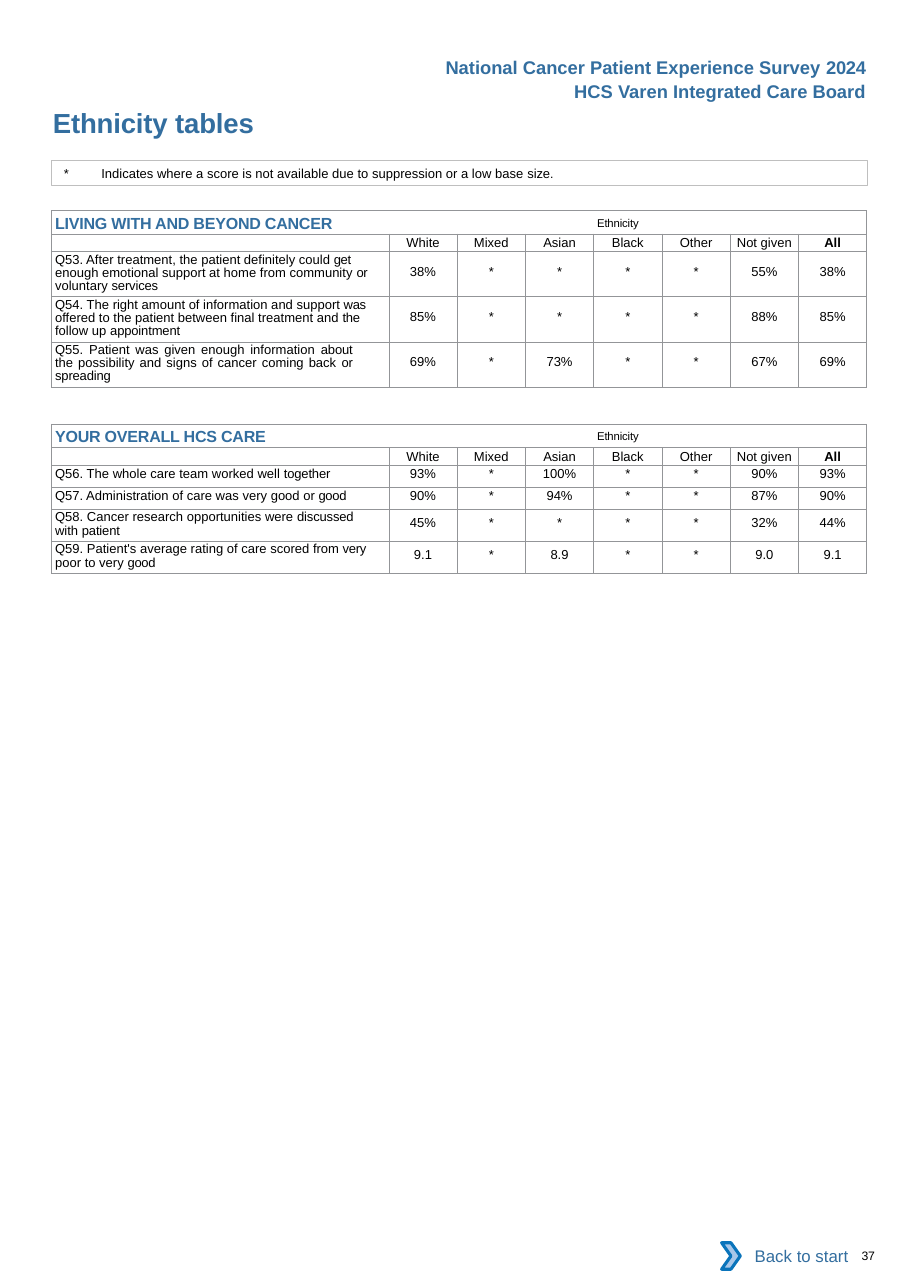
from lxml import etree
from pptx import Presentation
from pptx.dml.color import RGBColor
from pptx.enum.shapes import MSO_SHAPE
from pptx.enum.text import MSO_ANCHOR, PP_ALIGN
from pptx.oxml.ns import qn
from pptx.util import Inches, Pt

RECT, CHEVRON = MSO_SHAPE.RECTANGLE, MSO_SHAPE.CHEVRON
TOP, MIDDLE = MSO_ANCHOR.TOP, MSO_ANCHOR.MIDDLE
LEFT, CENTER, RIGHT, JUSTIFY = PP_ALIGN.LEFT, PP_ALIGN.CENTER, PP_ALIGN.RIGHT, PP_ALIGN.JUSTIFY

BLUE = RGBColor(0x33, 0x6E, 0x9F)
BLACK = RGBColor(0, 0, 0)
WHITE = RGBColor(0xFF, 0xFF, 0xFF)
NOTE_LINE = RGBColor(0xBF, 0xBF, 0xBF)
CHEVRON_FILL = RGBColor(0xA8, 0xC7, 0xE9)
CHEVRON_LINE = RGBColor(0x0A, 0x74, 0xBB)
GRID_HEX = "939598"

FONT = "Arial"
PAGE_W, PAGE_H = 8.26, 11.69
MARGIN = 0.47
BODY_W = 7.4
QUESTION_W = 3.06
GROUPS = ["White", "Mixed", "Asian", "Black", "Other", "Not given", "All"]
VALUE_W = (BODY_W - QUESTION_W) / len(GROUPS)
HEAD_ROWS = [0.21, 0.16]
VALUE_TOP = {1: 0.01, 2: 0.06, 3: 0.12}
ROW_H = {1: 0.2, 2: 0.29, 3: 0.41}

LIVING = [
    (3, LEFT, 0.15, [("Q53. After treatment, the patient definitely could", 0), (" get ", -0.2),
                     ("enough emotional support at home from community ", 0), ("or ", -0.2),
                     ("voluntary ", 0), ("services", -0.1)], "38% * * * * 55% 38%"),
    (3, LEFT, 0.15, [("Q54. The right amount of information and support", 0), (" was ", -0.2),
                     ("offered to the patient between final treatment and ", 0), ("the ", -0.2),
                     ("follow up ", 0), ("appointment", -0.1)], "85% * * * * 88% 85%"),
    (3, JUSTIFY, 0.33, [("Q55. Patient was given enough information ", 0), ("about ", -0.1),
                        ("the possibility and signs of cancer coming back ", 0), ("or ", -0.2),
                        ("spreading", -0.1)], "69% * 73% * * 67% 69%"),
]
OVERALL = [
    (1, LEFT, 0, [("Q56. The whole care team worked well ", 0), ("together", -0.1)],
     "93% * 100% * * 90% 93%"),
    (1, LEFT, 0, [("Q57. Administration of care was very good or", 0), (" good", -0.2)],
     "90% * 94% * * 87% 90%"),
    (2, LEFT, 0.32, [("Q58. Cancer research opportunities were ", 0), ("discussed ", -0.1),
                     ("with ", 0), ("patient", -0.1)], "45% * * * * 32% 44%"),
    (2, LEFT, 0.15, [("Q59. Patient's average rating of care scored from", 0), (" very ", -0.2),
                     ("poor to very ", 0), ("good", -0.2)], "9.1 * 8.9 * * 9.0 9.1"),
]


def add_run(p, text, size=8.5, color=BLACK, bold=False, spacing=0, baseline=0):
    r = p.add_run()
    r.text = text
    r.font.name, r.font.size, r.font.bold = FONT, Pt(size), bold
    r.font.color.rgb = color
    for name, value in (("spc", round(spacing * 100)), ("baseline", baseline * 1000)):
        if value:
            r.font._element.set(name, str(value))


def indent(p, left, right=0, tab=None):
    pPr = p._p.get_or_add_pPr()
    pPr.set("marL", str(Inches(left)))
    pPr.set("marR", str(Inches(right)))
    if tab:
        tabs = etree.SubElement(pPr, qn("a:tabLst"))
        etree.SubElement(tabs, qn("a:tab"), pos=str(Inches(tab)), algn="l")


def set_margins(target, top=0, bottom=0):
    target.margin_left = target.margin_right = 0
    target.margin_top, target.margin_bottom = Inches(top), Inches(bottom)


def add_box(shapes, kind, box, fill=None, line=None, width=0.5):
    s = shapes.add_shape(kind, *map(Inches, box))
    s.shadow.inherit = False
    if fill is None:
        s.fill.background()
    else:
        s.fill.solid()
        s.fill.fore_color.rgb = fill
    if line is None:
        s.line.fill.background()
    else:
        s.line.color.rgb, s.line.width = line, Pt(width)
    return s


def page_header(slide, right, top, pitch):
    lines = [
        (4.04, [("National Cancer Patient Experience Survey ", 0), ("2024", -0.2)]),
        (2.93, [("HCS Varen Integrated Care Board", 0)]),
    ]
    for i, (width, runs) in enumerate(lines):
        box = right - width, top + i * pitch, width, 0.3
        tf = slide.shapes.add_textbox(*map(Inches, box)).text_frame
        tf.word_wrap = False
        p = tf.paragraphs[0]
        p.alignment = RIGHT
        for text, spacing in runs:
            add_run(p, text, 12, BLUE, True, spacing)


def page_title(slide, box):
    s = slide.shapes.title
    s.left, s.top, s.width, s.height = map(Inches, box)
    tf = s.text_frame
    set_margins(tf)
    tf.vertical_anchor = TOP
    p = tf.paragraphs[0]
    p.alignment = LEFT
    indent(p, 0.01)
    add_run(p, "Ethnicity tables", 18, BLUE, True, -0.1)


def suppression_note(slide, box):
    tf = add_box(slide.shapes, RECT, box, line=NOTE_LINE).text_frame
    set_margins(tf, 0.04, 0.04)
    tf.vertical_anchor = MIDDLE
    p = tf.paragraphs[0]
    p.alignment = LEFT
    indent(p, 0.11, tab=0.34)
    add_run(p, "*", spacing=-0.5)
    add_run(p, "\tIndicates where a score is not available due to suppression or a low base ")
    add_run(p, "size", spacing=-0.1)
    add_run(p, ".", 8)


def format_cell(cell):
    set_margins(cell)
    cell.fill.background()
    tcPr = cell._tc.get_or_add_tcPr()
    for i, side in enumerate(("lnL", "lnR", "lnT", "lnB")):
        ln = etree.Element(qn(f"a:{side}"), w=str(Pt(0.5)))
        fill = etree.SubElement(ln, qn("a:solidFill"))
        etree.SubElement(fill, qn("a:srgbClr"), val=GRID_HEX)
        tcPr.insert(i, ln)


def score_table(slide, top, heading, questions):
    heights = HEAD_ROWS + [ROW_H[q[0]] for q in questions]
    widths = [QUESTION_W] + [VALUE_W] * len(GROUPS)
    box = MARGIN, top, BODY_W, sum(heights)
    table = slide.shapes.add_table(len(heights), len(widths), *map(Inches, box)).table
    table.first_row = table.horz_banding = False
    for column, width in zip(table.columns, widths):
        column.width = Inches(width)
    for row, height in zip(table.rows, heights):
        row.height = Inches(height)
        for cell in row.cells:
            format_cell(cell)
            end = etree.SubElement(cell.text_frame.paragraphs[0]._p, qn("a:endParaRPr"))
            end.set("sz", "850")

    title = table.cell(0, 0)
    title.merge(table.cell(0, len(GROUPS)))
    title.vertical_anchor = MIDDLE
    p = title.text_frame.paragraphs[0]
    indent(p, 0.03, tab=4.92)
    add_run(p, heading + "\t", 10.5, BLUE, True, -0.1)
    add_run(p, "Ethnicity", 12.8, spacing=-0.1, baseline=10)

    for col, group in enumerate(GROUPS, 1):
        cell = table.cell(1, col)
        cell.vertical_anchor = MIDDLE
        p = cell.text_frame.paragraphs[0]
        p.alignment, p.line_spacing = CENTER, Pt(9.9)
        add_run(p, group, bold=group == "All")

    for row, (lines, align, right, runs, values) in enumerate(questions, 2):
        cell = table.cell(row, 0)
        cell.margin_top = Inches(0.01 if lines == 1 else 0.02)
        p = cell.text_frame.paragraphs[0]
        p.alignment = align
        indent(p, 0.03, right)
        if lines > 1:
            p.line_spacing = Pt(8.6)
        for text, spacing in runs:
            add_run(p, text, spacing=spacing)
        for col, value in enumerate(values.split(), 1):
            cell = table.cell(row, col)
            cell.margin_top = Inches(VALUE_TOP[lines])
            p = cell.text_frame.paragraphs[0]
            p.alignment = CENTER
            add_run(p, value)


def page_footer(slide, left, top):
    tf = slide.shapes.add_textbox(*map(Inches, (left + 1.17, top + 0.05, 0.51, 0.13))).text_frame
    tf.word_wrap = True
    set_margins(tf)
    p = tf.paragraphs[0]
    indent(p, 0.1)
    add_run(p, "37", 8, spacing=-0.2)

    group = slide.shapes.add_group_shape()
    label = add_box(group.shapes, RECT, (left + 0.07, top - 0.09, 1.18, 0.42), WHITE)
    label.text_frame.vertical_anchor = MIDDLE
    p = label.text_frame.paragraphs[0]
    p.alignment = RIGHT
    add_run(p, "Back to start", 11, BLUE)
    add_box(group.shapes, CHEVRON, (left, top, 0.17, 0.24), CHEVRON_FILL, CHEVRON_LINE, 2)


def main():
    prs = Presentation()
    prs.slide_width, prs.slide_height = Inches(PAGE_W), Inches(PAGE_H)
    slide = prs.slides.add_slide(prs.slide_layouts[5])
    page_header(slide, 7.96, 0.46, 0.22)
    page_title(slide, (MARGIN, 0.96, 4.5, 0.3))
    suppression_note(slide, (MARGIN, 1.46, BODY_W, 0.22))
    score_table(slide, 1.91, "LIVING WITH AND BEYOND CANCER", LIVING)
    score_table(slide, 3.85, "YOUR OVERALL HCS CARE", OVERALL)
    page_footer(slide, 6.55, 11.28)
    prs.save("out.pptx")


if __name__ == "__main__":
    main()
